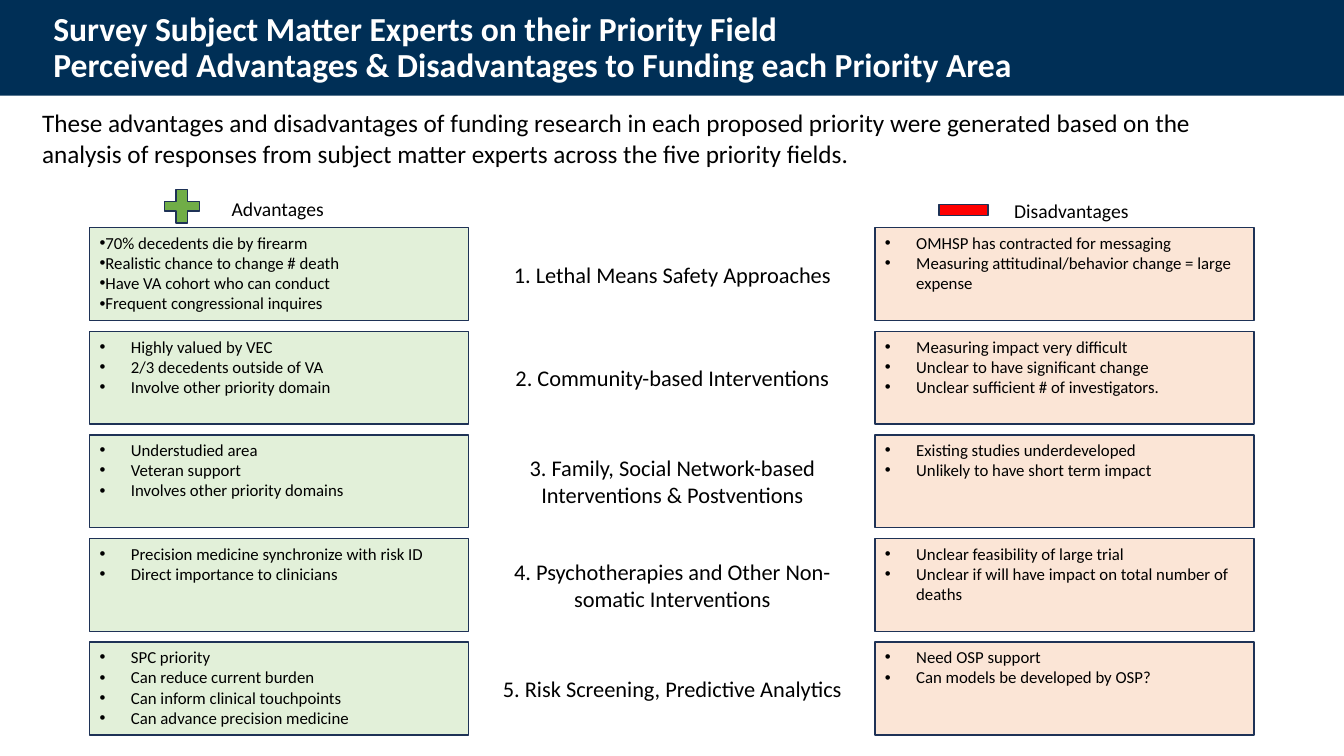
from lxml.etree import SubElement
from pptx import Presentation
from pptx.dml.color import RGBColor
from pptx.enum.shapes import MSO_SHAPE as SHAPE
from pptx.enum.text import MSO_ANCHOR as ANCHOR, PP_ALIGN as ALIGN
from pptx.oxml.ns import qn
from pptx.util import Cm, Pt

NAVY, WHITE, BLACK, OUTLINE = "002F56", "FFFFFF", "000000", "1E3256"
GREEN, RED, PALE_GREEN, PALE_ORANGE = "70AD47", "FF0000", "E2F0D9", "FBE5D6"
INDENT = Cm(0.79)
BOX_W, BOX_H, ROW_TOP, ROW_PITCH = 9.55, 2.34, 5.74, 2.61
ADVANTAGES_X, PRIORITY_X, DISADVANTAGES_X = 2.26, 12.17, 22.05

ROWS = [
    ("1. Lethal Means Safety Approaches",
     ["70% decedents die by firearm", "Realistic chance to change # death",
      "Have VA cohort who can conduct", "Frequent congressional inquires"],
     ["OMHSP has contracted for messaging",
      "Measuring attitudinal/behavior change = large expense"]),
    ("2. Community-based Interventions",
     ["Highly valued by VEC", "2/3 decedents outside of VA", "Involve other priority domain"],
     ["Measuring impact very difficult", "Unclear to have significant change",
      "Unclear sufficient # of investigators."]),
    ("3. Family, Social Network-based Interventions & Postventions",
     ["Understudied area", "Veteran support", "Involves other priority domains"],
     ["Existing studies underdeveloped", "Unlikely to have short term impact"]),
    ("4. Psychotherapies and Other Non-somatic Interventions",
     ["Precision medicine synchronize with risk ID", "Direct importance to clinicians"],
     ["Unclear feasibility of large trial",
      "Unclear if will have impact on total number of deaths"]),
    ("5. Risk Screening, Predictive Analytics",
     ["SPC priority", "Can reduce current burden", "Can inform clinical touchpoints",
      "Can advance precision medicine"],
     ["Need OSP support", "Can models be developed by OSP?"]),
]


def color(hex_code):
    return RGBColor.from_string(hex_code)


def add_bullet(p, margin):
    pPr = p._p.get_or_add_pPr()
    pPr.set("marL", str(margin))
    pPr.set("indent", str(-INDENT))
    SubElement(pPr, qn("a:buFont")).set("typeface", "Arial")
    SubElement(pPr, qn("a:buChar")).set("char", "•")


def write(tf, lines, size=12, fill=BLACK, bold=False, align=ALIGN.LEFT,
          anchor=ANCHOR.TOP, spacing=1.0, bullet_margin=None):
    tf.word_wrap = True
    tf.vertical_anchor = anchor
    for i, line in enumerate(lines):
        p = tf.paragraphs[0] if i == 0 else tf.add_paragraph()
        p.text = line
        p.alignment = align
        p.line_spacing = spacing
        if bullet_margin is not None:
            add_bullet(p, bullet_margin)
        for r in p.runs:
            r.font.name = "Calibri"
            r.font.size = Pt(size)
            r.font.bold = bold
            r.font.color.rgb = color(fill)


class SlideBuilder:
    """Holds the slide and its shared outline style."""

    def __init__(self, prs):
        self.s = prs.slides.add_slide(prs.slide_layouts[5])
        self.line_width = Pt(1)

    def shape(self, kind, x, y, w, h, fill, outline=OUTLINE):
        sp = self.s.shapes.add_shape(kind, Cm(x), Cm(y), Cm(w), Cm(h))
        sp.shadow.inherit = False
        sp.fill.solid()
        sp.fill.fore_color.rgb = color(fill)
        if outline:
            sp.line.color.rgb = color(outline)
            sp.line.width = self.line_width
        else:
            sp.line.fill.background()
        return sp

    def title(self, text, x, y, w, h):
        band = self.shape(SHAPE.RECTANGLE, 0, 0, 33.87, 2.41, NAVY, outline=None)
        sp = self.s.shapes.title
        sp.element.addprevious(band.element)
        sp.left, sp.top, sp.width, sp.height = Cm(x), Cm(y), Cm(w), Cm(h)
        write(sp.text_frame, [text], size=24, fill=WHITE, bold=True,
              anchor=ANCHOR.MIDDLE, spacing=0.9)

    def text(self, text, x, y, w, h, **style):
        sp = self.s.shapes.add_textbox(Cm(x), Cm(y), Cm(w), Cm(h))
        write(sp.text_frame, [text], **style)

    def bullet_box(self, lines, x, y, fill, margin=INDENT):
        sp = self.shape(SHAPE.RECTANGLE, x, y, BOX_W, BOX_H, fill)
        write(sp.text_frame, lines, bullet_margin=margin)


def main():
    prs = Presentation()
    prs.slide_width, prs.slide_height = Cm(33.87), Cm(19.05)
    b = SlideBuilder(prs)
    b.title("Survey Subject Matter Experts on their Priority Field\v"
            "Perceived Advantages & Disadvantages to Funding each Priority Area",
            1.09, 0.28, 31.22, 1.88)
    b.text("These advantages and disadvantages of funding research in each proposed priority "
           "were generated based on the analysis of responses from subject matter experts "
           "across the five priority fields.", 0.81, 2.59, 31.5, 1.8, size=18)

    plus = b.shape(SHAPE.CROSS, 4.14, 4.78, 0.89, 0.84, GREEN)
    plus.adjustments[0] = 0.355
    b.shape(SHAPE.MATH_MINUS, 23.44, 4.72, 1.68, 1.14, RED)
    b.text("Advantages", 5.03, 4.85, 3.94, 0.86, size=14, align=ALIGN.CENTER)
    b.text("Disadvantages", 24.28, 4.88, 5.44, 0.86, size=14, align=ALIGN.CENTER)

    for i, (priority, advantages, disadvantages) in enumerate(ROWS):
        y = ROW_TOP + i * ROW_PITCH
        b.bullet_box(advantages, ADVANTAGES_X, y, PALE_GREEN, margin=INDENT if i else 0)
        b.text(priority, PRIORITY_X, y, BOX_W, BOX_H, size=16,
               align=ALIGN.CENTER, anchor=ANCHOR.MIDDLE)
        b.bullet_box(disadvantages, DISADVANTAGES_X, y, PALE_ORANGE)
    prs.save("out.pptx")


if __name__ == "__main__":
    main()
